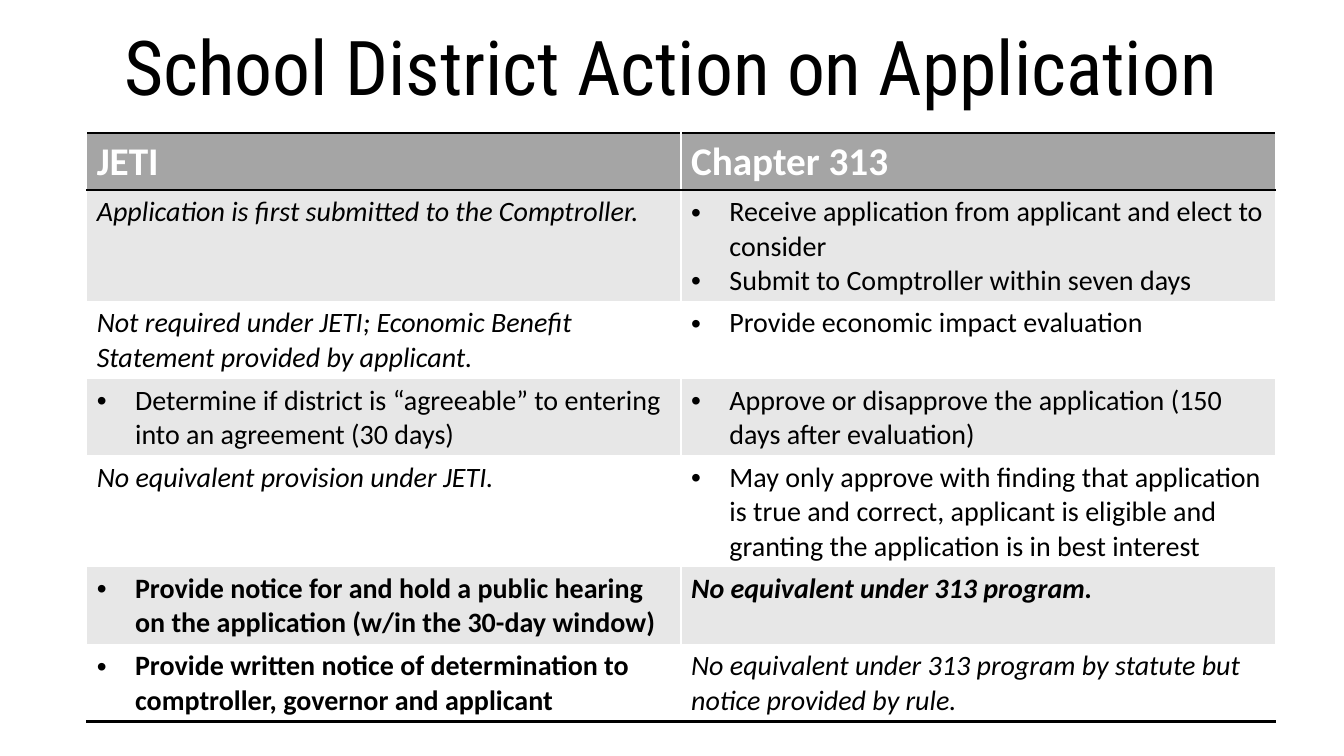
from lxml.etree import SubElement
from pptx import Presentation
from pptx.dml.color import RGBColor as Rgb
from pptx.enum.text import MSO_ANCHOR as Anchor, PP_ALIGN as Align
from pptx.oxml.ns import qn
from pptx.util import Inches as In, Pt

HUES = {"ink": "000000", "head": "A5A5A5", "band": "E7E7E7", "plain": "FFFFFF"}
INDENT = 0.38

# Each cell is a list of paragraphs: (text, style), with
# h = header, p = bullet, i = italic, b = bold
ROWS = [
    (0.56, [("JETI", "h")], [("Chapter 313", "h")]),
    (1.1, [("Application is first submitted to the Comptroller.", "i")],
     [("Receive application from applicant and elect to consider", "p"),
      ("Submit to Comptroller within seven days", "p")]),
    (0.76, [("Not required under JETI; Economic Benefit Statement provided by applicant.", "i")],
     [("Provide economic impact evaluation", "p")]),
    (0.76, [("Determine if district is “agreeable” to entering into an agreement (30 days)", "p")],
     [("Approve or disapprove the application (150 days after evaluation)", "p")]),
    (1.1, [("No equivalent provision under JETI.", "i")],
     [("May only approve with finding that application is true and correct, "
       "applicant is eligible and granting the application is in best interest", "p")]),
    (0.76, [("Provide notice for and hold a public hearing on the application "
             "(w/in the 30-day window)", "pb")],
     [("No equivalent under 313 program.", "ib")]),
    (0.76, [("Provide written notice of determination to comptroller, governor and applicant", "pb")],
     [("No equivalent under 313 program by statute but notice provided by rule.", "i")]),
]


def write(para, text, font="Calibri", size=20, hue="ink", bold=False,
          italic=False, bullet=False, align=Align.LEFT):
    para.alignment = align
    run = para.add_run()
    run.text = text
    face = run.font
    face.name, face.size, face.bold, face.italic = font, Pt(size), bold, italic
    face.color.rgb = Rgb.from_string(HUES[hue])
    if bullet:
        props = para._p.get_or_add_pPr()
        props.set("marL", str(In(INDENT)))
        props.set("indent", str(-In(INDENT)))
        SubElement(props, qn("a:buFont"), typeface="Arial")
        SubElement(props, qn("a:buChar"), char="•")


def rule(cell, sides):
    """Draw black lines on the given sides, ahead of the cell's fill."""
    props = cell._tc.get_or_add_tcPr()
    for spot, side in enumerate(sides):
        line = SubElement(props, qn("a:ln" + side), w=str(Pt(2)))
        fill = SubElement(line, qn("a:solidFill"))
        SubElement(fill, qn("a:srgbClr"), val=HUES["ink"])
        props.insert(spot, line)


def title(slide, left, top, width, height):
    frame = slide.shapes.add_textbox(In(left), In(top), In(width), In(height)).text_frame
    frame.word_wrap = False
    frame.vertical_anchor = Anchor.MIDDLE
    write(frame.paragraphs[0], "School District Action on Application",
          font="Roboto Condensed", size=54, align=Align.CENTER)


def grid(slide, left, top, width):
    high = sum(row[0] for row in ROWS)
    table = slide.shapes.add_table(len(ROWS), 2, In(left), In(top), In(width), In(high)).table
    for col in table.columns:
        col.width = In(width / 2)
    for r, (tall, *cells) in enumerate(ROWS):
        table.rows[r].height = In(tall)
        for c, paras in enumerate(cells):
            cell = table.cell(r, c)
            # Header, then alternating bands
            cell.fill.solid()
            shade = "head" if r == 0 else "band" if r % 2 else "plain"
            cell.fill.fore_color.rgb = Rgb.from_string(HUES[shade])
            frame = cell.text_frame
            for n, (text, style) in enumerate(paras):
                para = frame.add_paragraph() if n else frame.paragraphs[0]
                head = style == "h"
                write(para, text, size=28 if head else 20,
                      hue="plain" if head else "ink", bold=head or "b" in style,
                      italic="i" in style, bullet="p" in style)
            # Lines around the header and below the last row
            if r == 0:
                rule(cell, "TB")
            elif r == len(ROWS) - 1:
                rule(cell, "B")


def main():
    deck = Presentation()
    deck.slide_width, deck.slide_height = In(13.33), In(7.5)
    slide = deck.slides.add_slide(deck.slide_layouts[6])
    title(slide, 0.91, 0.14, 11.5, 1.01)
    grid(slide, 0.86, 1.32, 11.79)
    deck.save("out.pptx")


if __name__ == "__main__":
    main()
